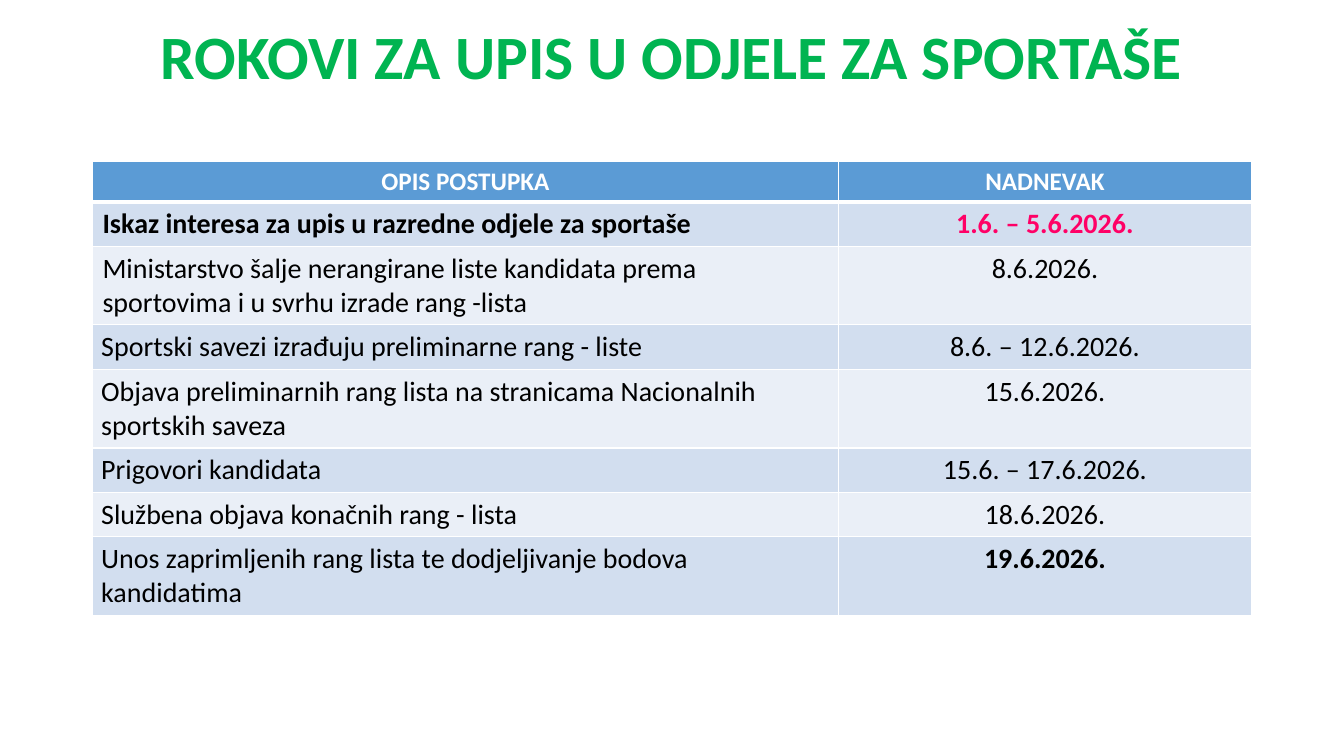
from lxml import etree
from pptx import Presentation
from pptx.dml.color import RGBColor
from pptx.enum.text import MSO_ANCHOR, PP_ALIGN
from pptx.oxml.ns import qn
from pptx.util import Cm, Pt

LEFT, CENTER = PP_ALIGN.LEFT, PP_ALIGN.CENTER
MIDDLE = MSO_ANCHOR.MIDDLE
FONT = "Calibri"
COLORS = {
    "title": "00B451",
    "header": "5B9BD5",
    "odd": "D2DEEF",
    "even": "EAEFF7",
    "white": "FFFFFF",
    "text": "000000",
    "accent": "FF0066",
}
HEADER = ("OPIS POSTUPKA", "NADNEVAK")
# Step, date, number of text lines
DEADLINES = [
    ("Iskaz interesa za upis u razredne odjele za sportaše", "1.6. – 5.6.2026.", 1),
    ("Ministarstvo šalje nerangirane liste kandidata prema sportovima "
     "i u svrhu izrade rang -lista", "8.6.2026.", 2),
    ("Sportski savezi izrađuju preliminarne rang - liste", "8.6. – 12.6.2026.", 1),
    ("Objava preliminarnih rang lista na stranicama Nacionalnih "
     "sportskih saveza", "15.6.2026.", 2),
    ("Prigovori kandidata", "15.6. – 17.6.2026.", 1),
    ("Službena objava konačnih rang - lista", "18.6.2026.", 1),
    ("Unos zaprimljenih rang lista te dodjeljivanje bodova kandidatima",
     "19.6.2026.", 2),
]
COLUMN_WIDTHS = (Cm(18.8), Cm(10.41))
HEADER_HEIGHT = Cm(0.99)
ROW_HEIGHTS = {1: Cm(1.12), 2: Cm(1.98)}


def add_run(p, text, size, color, bold=False):
    r = p.add_run()
    r.text = text
    r.font.name = FONT
    r.font.size = Pt(size)
    r.font.bold = bold
    r.font.color.rgb = RGBColor.from_string(COLORS[color])


def add_title(slide, left, top, width, height):
    tf = slide.shapes.add_textbox(left, top, width, height).text_frame
    tf.word_wrap = True
    tf.vertical_anchor = MIDDLE
    p = tf.paragraphs[0]
    p.alignment = CENTER
    p.line_spacing = 0.9
    add_run(p, "ROKOVI ZA UPIS U ODJELE ZA SPORTAŠE", 44, "title", True)


def set_borders(cell, top, bottom):
    """Give the cell white borders, 1 pt wide at the sides."""
    tc_pr = cell._tc.get_or_add_tcPr()
    for side, width in (("L", 1), ("R", 1), ("T", top), ("B", bottom)):
        ln = etree.SubElement(tc_pr, qn(f"a:ln{side}"), w=str(Pt(width)))
        fill = etree.SubElement(ln, qn("a:solidFill"))
        etree.SubElement(fill, qn("a:srgbClr"), val=COLORS["white"])


def fill_cell(cell, text, size, color, fill, bold, align, top=1, bottom=1):
    set_borders(cell, top, bottom)
    cell.fill.solid()
    cell.fill.fore_color.rgb = RGBColor.from_string(COLORS[fill])
    p = cell.text_frame.paragraphs[0]
    p.alignment = align
    add_run(p, text, size, color, bold)


def add_deadlines(slide, left, top, width):
    heights = [HEADER_HEIGHT] + [ROW_HEIGHTS[lines] for *_, lines in DEADLINES]
    table = slide.shapes.add_table(
        len(heights), len(HEADER), left, top, width, sum(heights)).table
    for column, column_width in zip(table.columns, COLUMN_WIDTHS):
        column.width = column_width
    for row, height in zip(table.rows, heights):
        row.height = height

    for i, text in enumerate(HEADER):
        fill_cell(table.cell(0, i), text, 18, "white", "header", True, CENTER, bottom=3)

    last = len(DEADLINES)
    for i, (step, date, _) in enumerate(DEADLINES, 1):
        fill = "odd" if i % 2 else "even"
        border = 3 if i == 1 else 1
        step_cell, date_cell = table.cell(i, 0), table.cell(i, 1)
        fill_cell(step_cell, step, 20, "text", fill, i == 1, LEFT, border)
        fill_cell(date_cell, date, 20, "accent" if i == 1 else "text", fill,
                  i in (1, last), CENTER, border)
        if i > 2:
            step_cell.margin_left = step_cell.margin_right = Cm(0.22)


def main():
    prs = Presentation()
    prs.slide_width, prs.slide_height = Cm(33.87), Cm(19.05)
    slide = prs.slides.add_slide(prs.slide_layouts[6])
    left, width = Cm(2.33), sum(COLUMN_WIDTHS)
    add_title(slide, left, Cm(0.4), width, Cm(2.19))
    add_deadlines(slide, left, Cm(4.07), width)
    prs.save("out.pptx")


if __name__ == "__main__":
    main()
